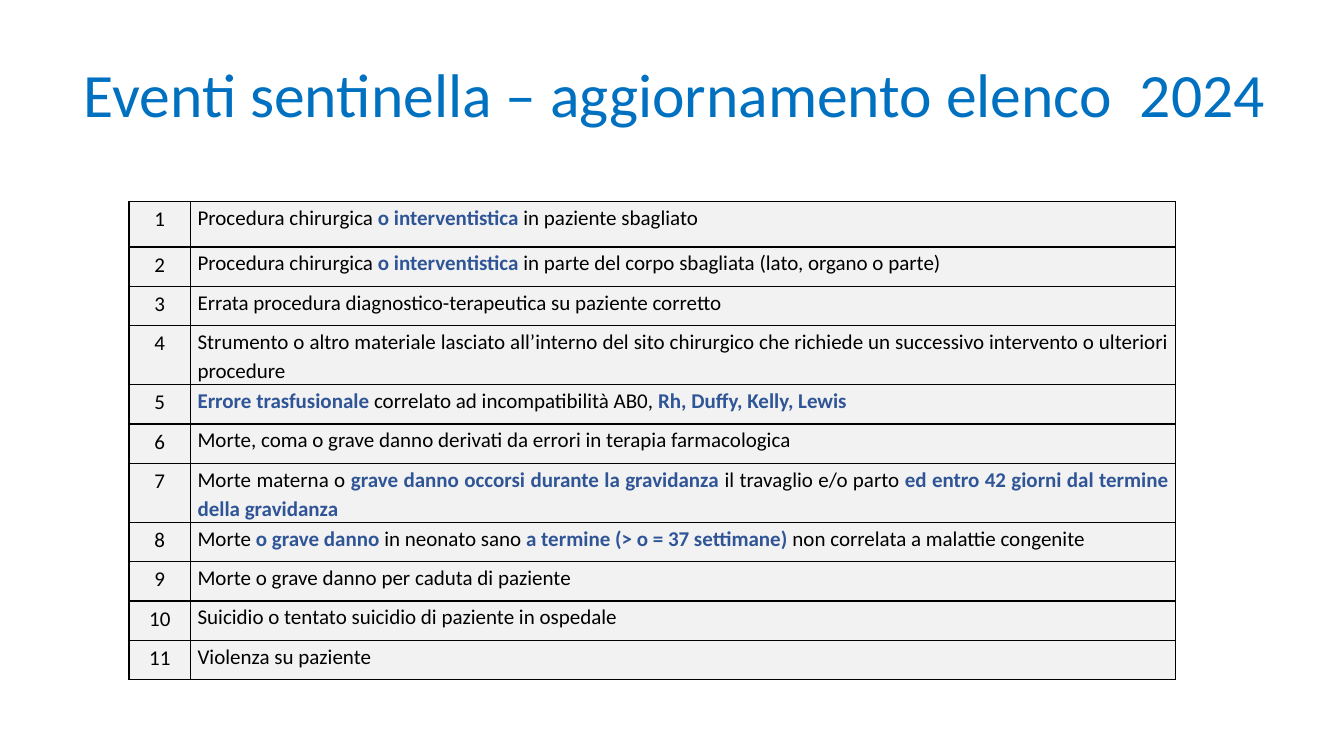
import dataclasses

import pptx
import pptx.dml.color
import pptx.enum.text
import pptx.oxml
import pptx.oxml.ns
import pptx.util


@dataclasses.dataclass(frozen=True)
class Theme:
    font: str = "Calibri"
    title: str = "0070C0"
    text: str = "000000"
    accent: str = "2F5597"
    cell: str = "F2F2F2"
    border: str = "000000"
    title_size: int = 44
    text_size: int = 15


theme = Theme()
PX = 9144
ALIGN = pptx.enum.text.PP_ALIGN
rgb = pptx.dml.color.RGBColor.from_string

EVENTS = [
    "Procedura chirurgica |o interventistica |in paziente sbagliato",
    "Procedura chirurgica |o interventistica |in parte del corpo sbagliata (lato, organo o parte)",
    "Errata procedura diagnostico-terapeutica su paziente corretto",
    "Strumento o altro materiale lasciato all’interno del sito chirurgico "
    "che richiede un successivo intervento o ulteriori procedure",
    "|Errore trasfusionale |correlato ad incompatibilità AB0, |Rh, Duffy, Kelly, Lewis",
    "Morte, coma o grave danno derivati da errori in terapia farmacologica",
    "Morte materna o |grave danno occorsi durante la gravidanza |il travaglio e/o parto "
    "|ed entro 42 giorni dal termine della gravidanza",
    "Morte |o grave danno |in neonato sano |a termine (> o = 37 settimane) "
    "|non correlata a malattie congenite",
    "Morte o grave danno per caduta di paziente",
    "Suicidio o tentato suicidio di paziente in ospedale",
    "Violenza su paziente",
]


def style_run(r, size, color, bold=False):
    r.font.name = theme.font
    r.font.size = pptx.util.Pt(size)
    r.font.bold = bold
    r.font.color.rgb = rgb(color)


def fill_cell(cell, text, align, spacing, inset_x, inset_y):
    cell.margin_left = cell.margin_right = inset_x * PX
    cell.margin_top = cell.margin_bottom = inset_y * PX
    tc_pr = cell._tc.get_or_add_tcPr()
    for side in ("lnL", "lnR", "lnT", "lnB"):
        tc_pr.append(pptx.oxml.parse_xml(
            f'<a:{side} {pptx.oxml.ns.nsdecls("a")} w="12700"><a:solidFill>'
            f'<a:srgbClr val="{theme.border}"/></a:solidFill></a:{side}>'))
    cell.fill.solid()
    cell.fill.fore_color.rgb = rgb(theme.cell)
    p = cell.text_frame.paragraphs[0]
    p.alignment = align
    p.line_spacing = spacing
    for i, part in enumerate(text.split("|")):
        if part:
            r = p.add_run()
            r.text = part
            accented = i % 2 == 1
            style_run(r, theme.text_size, theme.accent if accented else theme.text, accented)


prs = pptx.Presentation()
prs.slide_width, prs.slide_height = 1333 * PX, 750 * PX
slide = prs.slides.add_slide(prs.slide_layouts.get_by_name("Title Only"))

title = slide.shapes.title
title.left, title.top, title.width, title.height = 73 * PX, 24 * PX, 1222 * PX, 145 * PX
tf = title.text_frame
tf.text = "Eventi sentinella – aggiornamento elenco  2024"
tf.word_wrap = True
tf.auto_size = pptx.enum.text.MSO_AUTO_SIZE.NONE
tf.vertical_anchor = pptx.enum.text.MSO_ANCHOR.MIDDLE
p = tf.paragraphs[0]
p.alignment = ALIGN.LEFT
p.line_spacing = 0.9
p.space_after = pptx.util.Pt(6)
style_run(p.runs[0], theme.title_size, theme.title)

table = slide.shapes.add_table(len(EVENTS), 2, 128 * PX, 200 * PX, 1038 * PX, 435 * PX).table
table.first_row = False
table.horz_banding = False
table.columns[0].width = 61 * PX
table.columns[1].width = 977 * PX
for n, event in enumerate(EVENTS):
    table.rows[n].height = (39 if n else 45) * PX
    fill_cell(table.cell(n, 0), str(n + 1), ALIGN.CENTER, 1.0, 9, 5)
    fill_cell(table.cell(n, 1), event, ALIGN.JUSTIFY, 1.15, 7, 0)

prs.save("out.pptx")
